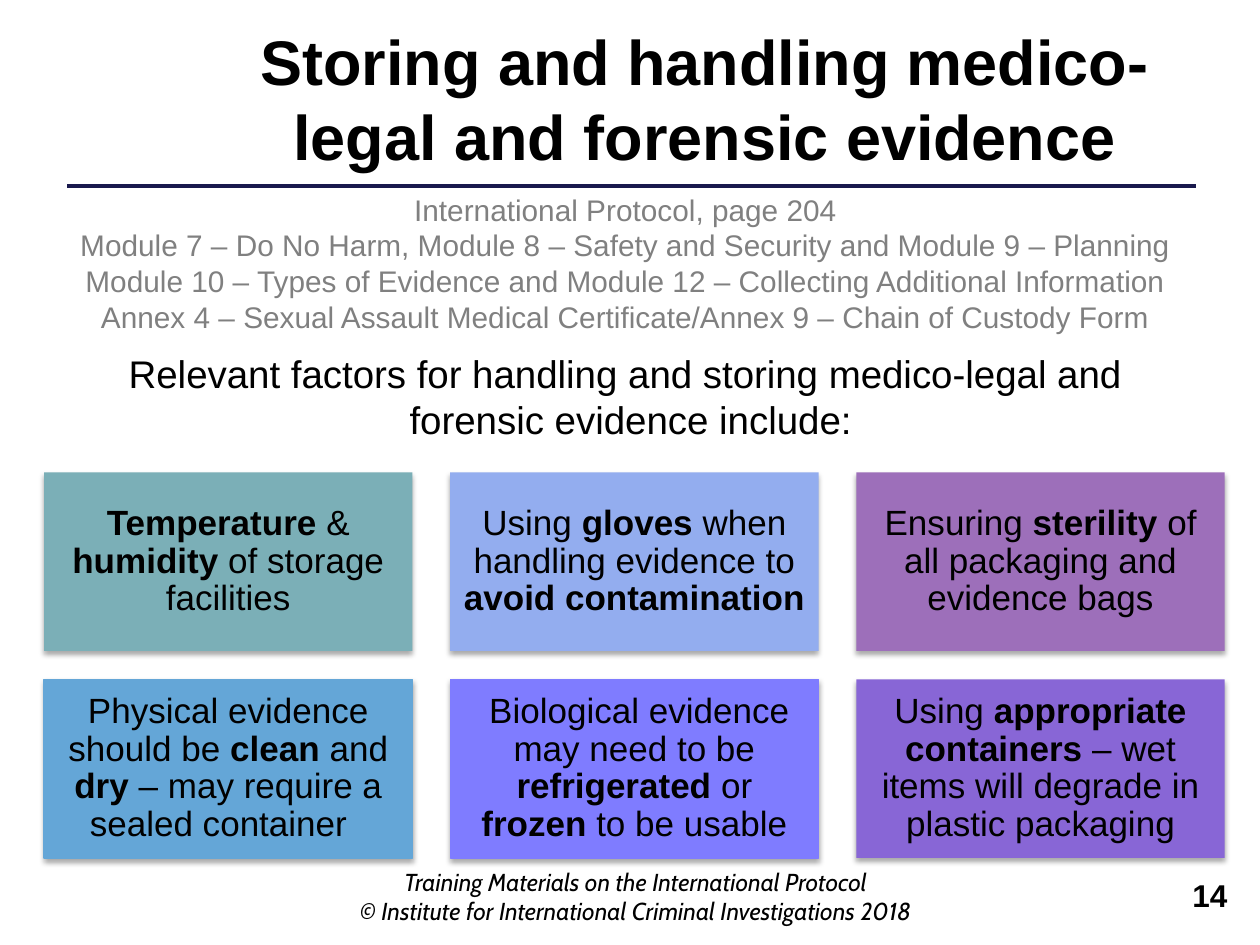
from lxml.etree import SubElement
from pptx import Presentation
from pptx.dml.color import RGBColor
from pptx.enum.shapes import MSO_CONNECTOR, MSO_SHAPE
from pptx.enum.text import MSO_ANCHOR, PP_ALIGN
from pptx.oxml.ns import qn
from pptx.util import Inches, Pt

WIDE, HIGH = Inches(10), Inches(7.5)
BLACK = RGBColor(0x00, 0x00, 0x00)
GREY = RGBColor(0x80, 0x80, 0x80)
NAVY = RGBColor(0x19, 0x19, 0x4D)
TEAL = RGBColor(0x7B, 0xAF, 0xB7)
SKY = RGBColor(0x93, 0xAD, 0xEF)
PLUM = RGBColor(0x9D, 0x6F, 0xBA)
BLUE = RGBColor(0x64, 0xA6, 0xD7)
INDIGO = RGBColor(0x7F, 0x7C, 0xFF)
VIOLET = RGBColor(0x88, 0x66, 0xD6)

REFS = [
    "International Protocol, page 204",
    "Module 7 – Do No Harm, Module 8 – Safety and Security and Module 9 – Planning "
    "Module 10 – Types of Evidence and Module 12 – Collecting Additional Information",
    "Annex 4 – Sexual Assault Medical Certificate/Annex 9 – Chain of Custody Form",
]
INTRO = [
    "Relevant factors for handling and storing medico-legal and ",
    "forensic evidence include:",
]
CREDIT = [
    "Training Materials on the International Protocol",
    "© Institute for International Criminal Investigations 2018",
]
# Words between asterisks are bold; the flag asks for an outline.
CARDS = [
    (TEAL, False, "*Temperature* & *humidity* of storage facilities"),
    (SKY, False, "Using *gloves* when handling evidence to *avoid contamination *"),
    (PLUM, False, "Ensuring* sterility *of all packaging and evidence bags"),
    (BLUE, True, "Physical evidence should be *clean *and *dry *– may require a "
                 "sealed container  "),
    (INDIGO, True, " Biological evidence may need to be *refrigerated *or *frozen* "
                   "to be usable"),
    (VIOLET, False, "Using *appropriate containers *– wet items will degrade in "
                    "plastic packaging"),
]
COLS, ROWS = 3, 2


def scale(box):
    """Turn shares of the slide into lengths."""
    x, y, w, h = box
    return int(x * WIDE), int(y * HIGH), int(w * WIDE), int(h * HIGH)


def style(para, size, color=BLACK, align=PP_ALIGN.CENTER, name="Arial"):
    para.alignment = align
    para.font.name = name
    para.font.size = Pt(size)
    para.font.color.rgb = color


def add_text(slide, box, lines, size, bold=False, italic=False, **look):
    frame = slide.shapes.add_textbox(*scale(box)).text_frame
    frame.word_wrap = True
    frame.text = "\n".join(lines)
    for para in frame.paragraphs:
        style(para, size, **look)
        para.font.bold = bold
        para.font.italic = italic


def add_rule(slide, box):
    x, y, w, h = scale(box)
    rule = slide.shapes.add_connector(MSO_CONNECTOR.STRAIGHT, x + w, y, x, y + h)
    rule.line.color.rgb = NAVY
    rule.line.width = Pt(2.5)
    SubElement(rule._element.spPr, qn("a:effectLst"))


def add_shadow(shape):
    shape.shadow.inherit = False
    effects = shape._element.spPr.find(qn("a:effectLst"))
    outer = SubElement(effects, qn("a:outerShdw"), blurRad=str(Pt(3.1)),
                       dist=str(Pt(1.8)), dir="5400000", rotWithShape="0")
    color = SubElement(outer, qn("a:srgbClr"), val=str(BLACK))
    SubElement(color, qn("a:alpha"), val="35000")


def add_card(slide, box, fill, edged, text):
    card = slide.shapes.add_shape(MSO_SHAPE.RECTANGLE, *scale(box))
    card.fill.solid()
    card.fill.fore_color.rgb = fill
    if edged:
        card.line.color.rgb = fill
        card.line.width = Pt(0.75)
    else:
        card.line.fill.background()
    add_shadow(card)
    frame = card.text_frame
    frame.word_wrap = True
    frame.vertical_anchor = MSO_ANCHOR.MIDDLE
    frame.margin_left = frame.margin_right = Inches(0.09)
    frame.margin_top = frame.margin_bottom = Inches(0.09)
    para = frame.paragraphs[0]
    para.line_spacing = 0.9
    for i, part in enumerate(text.split("*")):
        if part:
            run = para.add_run()
            run.text = part
            run.font.bold = i % 2 == 1
    style(para, 20)


def add_grid(slide, box, gap_x=0.03, gap_y=0.03):
    x, y, w, h = box
    card_w = (w - (COLS - 1) * gap_x) / COLS
    card_h = (h - (ROWS - 1) * gap_y) / ROWS
    for i, card in enumerate(CARDS):
        row, col = divmod(i, COLS)
        place = (x + col * (card_w + gap_x), y + row * (card_h + gap_y),
                 card_w, card_h)
        add_card(slide, place, *card)


def main():
    deck = Presentation()
    deck.slide_width, deck.slide_height = WIDE, HIGH
    slide = deck.slides.add_slide(deck.slide_layouts[6])
    add_rule(slide, (0.053, 0.197, 0.896, 0))
    add_text(slide, (0.272, 0.911, 0.465, 0.07), CREDIT, 14, italic=True, name="Cabin")
    add_text(slide, (0.146, 0.017, 0.827, 0.175),
             ["Storing and handling medico-legal and forensic evidence"], 36, bold=True)
    add_text(slide, (0.728, 0.92, 0.256, 0.07), ["14"], 18, bold=True,
             align=PP_ALIGN.RIGHT)
    add_text(slide, (0.02, 0.196, 0.953, 0.256), REFS, 17, color=GREY)
    add_text(slide, (0.02, 0.364, 0.961, 0.112), INTRO, 22)
    add_grid(slide, (0.035, 0.5, 0.937, 0.408))
    deck.save("out.pptx")


if __name__ == "__main__":
    main()
